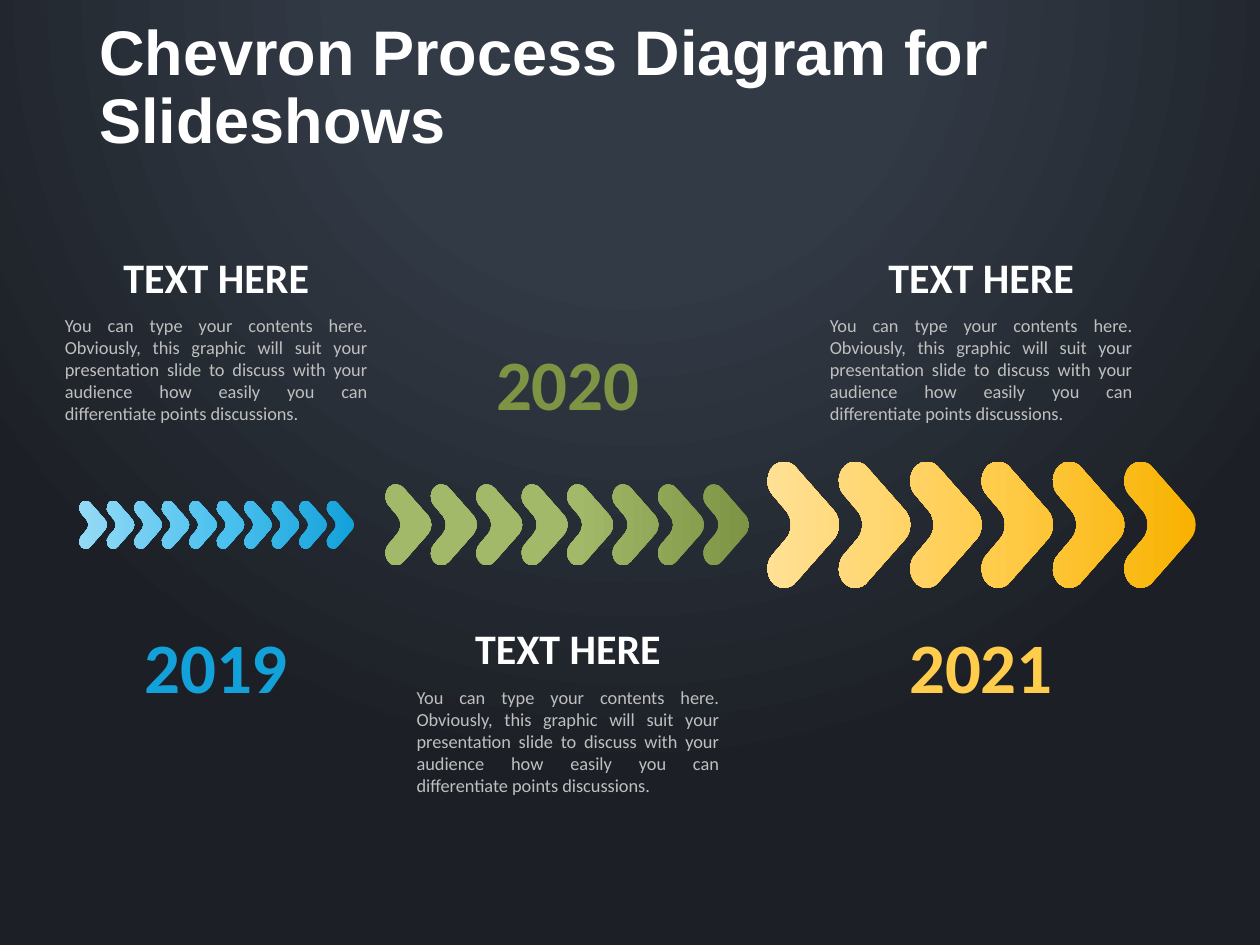
"""Build a dark slide with three growing chevron trails for three years."""

from dataclasses import dataclass

from lxml.etree import SubElement
from pptx import Presentation
from pptx.dml.color import RGBColor
from pptx.enum.text import MSO_ANCHOR, MSO_AUTO_SIZE, PP_ALIGN
from pptx.oxml import parse_xml
from pptx.oxml.ns import nsdecls, qn
from pptx.shapes.autoshape import Shape
from pptx.slide import Slide
from pptx.util import Cm, Pt

Point = tuple[float, float]
Stops = tuple[tuple[int, str], ...]

MIDDLE = 10.58
UPPER, LOWER = 4.93, 12.42
BLOCK_WIDTH, HEADING_HEIGHT, BODY_HEIGHT = 6.1, 1.28, 2.49
YEAR_WIDTH, YEAR_HEIGHT = 3.43, 1.98
CHEVRON_WIDTH = 0.57

CHEVRON: list[tuple[str, tuple[Point, ...]]] = [
    ("moveTo", ((0.13, 0),)),
    ("cubicBezTo", ((0.17, 0), (0.21, 0.02), (0.23, 0.05))),
    ("lnTo", ((0.53, 0.39),)),
    ("cubicBezTo", ((0.58, 0.45), (0.58, 0.55), (0.53, 0.61))),
    ("lnTo", ((0.23, 0.95),)),
    ("cubicBezTo", ((0.21, 0.98), (0.17, 1), (0.13, 1))),
    ("cubicBezTo", ((0.01, 1), (-0.04, 0.83), (0.04, 0.74))),
    ("lnTo", ((0.15, 0.61),)),
    ("cubicBezTo", ((0.2, 0.55), (0.2, 0.45), (0.15, 0.39))),
    ("lnTo", ((0.04, 0.26),)),
    ("cubicBezTo", ((-0.04, 0.17), (0.01, 0), (0.13, 0))),
    ("close", ()),
]

HEADING = "TEXT HERE"
BODY = (
    "You can type your contents here. Obviously, this graphic will suit your "
    "presentation slide to discuss with your audience how easily you can "
    "differentiate points discussions."
)

BACKGROUND: Stops = ((0, "323A45"), (35, "323A45"), (100, "1C2026"))
TITLE_FORMAT = {"name": "Arial", "size": Pt(36), "bold": True}
HEADING_FORMAT = {"name": "Calibri", "size": Pt(24), "bold": True}
BODY_FORMAT = {"name": "Calibri", "size": Pt(10.5), "bold": False}
YEAR_FORMAT = {"name": "Calibri", "size": Pt(40.5), "bold": True}


@dataclass(frozen=True)
class Trail:
    """A row of equal chevrons within a given width."""

    left: float
    width: float
    height: float
    count: int
    stops: Stops


@dataclass(frozen=True)
class Milestone:
    """A year with its text block on the other side of the trail."""

    year: str
    color: str
    left: float
    text_top: float
    year_top: float


TRAILS = [
    Trail(7.77, 7.34, 1.63, 8, ((0, "7E9445"), (48, "A2B969"), (100, "A2B969"))),
    Trail(1.6, 5.54, 0.97, 10, ((0, "13A1D9"), (48, "4CC1EF"), (100, "94DAF5"))),
    Trail(15.47, 8.64, 2.54, 6, ((0, "F8B200"), (48, "FFCC4C"), (100, "FFE094"))),
]
MILESTONES = [
    Milestone("2019", "13A1D9", 1.31, UPPER, LOWER),
    Milestone("2020", "7E9445", 8.4, LOWER, 6.73),
    Milestone("2021", "FFCC4C", 16.73, UPPER, LOWER),
]


def rgb(color: str) -> RGBColor:
    """Turn a hex string into a colour."""
    return RGBColor.from_string(color)


def set_gradient(parent, stops: Stops, radial: bool = False) -> None:
    """Replace the solid fill inside an element with a gradient."""
    gradient = parse_xml(f'<a:gradFill {nsdecls("a")} rotWithShape="1"/>')
    stop_list = SubElement(gradient, qn("a:gsLst"))
    for position, color in stops:
        stop = SubElement(stop_list, qn("a:gs"), pos=str(position * 1000))
        SubElement(stop, qn("a:srgbClr"), val=color)
    if radial:
        circle = SubElement(gradient, qn("a:path"), path="circle")
        SubElement(circle, qn("a:fillToRect"),
                   l="50000", t="-80000", r="50000", b="180000")
    else:
        SubElement(gradient, qn("a:lin"), ang="10800000", scaled="0")
    parent.replace(parent.find(qn("a:solidFill")), gradient)


def draw_chevron(outline, offset: float, height: float) -> None:
    """Append one curved chevron to the outline of a trail."""
    for command, points in CHEVRON:
        step = SubElement(outline, qn(f"a:{command}"))
        for x, y in points:
            SubElement(step, qn("a:pt"), x=str(Cm(offset + x * height)),
                       y=str(Cm(y * height)))


def add_trail(slide: Slide, trail: Trail) -> None:
    """Draw a trail of chevrons as one shape with one gradient."""
    left, top = Cm(trail.left), Cm(MIDDLE - trail.height / 2)
    right, bottom = left + Cm(trail.width), top + Cm(trail.height)
    builder = slide.shapes.build_freeform(left, top)
    builder.add_line_segments([(right, top), (right, bottom), (left, bottom)])
    shape = builder.convert_to_shape()
    outline = shape.element.spPr.find(f".//{qn('a:path')}")
    for child in list(outline):
        outline.remove(child)
    pitch = (trail.width - CHEVRON_WIDTH * trail.height) / (trail.count - 1)
    for index in range(trail.count):
        draw_chevron(outline, index * pitch, trail.height)
    shape.shadow.inherit = False
    shape.line.fill.background()
    shape.fill.solid()
    set_gradient(shape.element.spPr, trail.stops)


def write_text(box: Shape, text: str, color: str, alignment: PP_ALIGN,
               font_format: dict) -> None:
    """Put one formatted paragraph in a box."""
    para = box.text_frame.paragraphs[0]
    para.alignment = alignment
    span = para.add_run()
    span.text = text
    span.font.color.rgb = rgb(color)
    for name, value in font_format.items():
        setattr(span.font, name, value)


def add_box(slide: Slide, bounds: tuple[float, ...], frame_format: dict) -> Shape:
    """Add a text box that grows with its text."""
    box = slide.shapes.add_textbox(*map(Cm, bounds))
    settings = {"auto_size": MSO_AUTO_SIZE.SHAPE_TO_FIT_TEXT, **frame_format}
    for name, value in settings.items():
        setattr(box.text_frame, name, value)
    return box


def add_milestone(slide: Slide, item: Milestone) -> None:
    """Draw the heading, body and year of a milestone."""
    flush = {"word_wrap": True, "margin_left": 0, "margin_right": 0}
    heading = add_box(slide, (item.left, item.text_top, BLOCK_WIDTH, HEADING_HEIGHT),
                      {**flush, "vertical_anchor": MSO_ANCHOR.BOTTOM})
    write_text(heading, HEADING, "FFFFFF", PP_ALIGN.CENTER, HEADING_FORMAT)
    body_top = item.text_top + HEADING_HEIGHT
    body = add_box(slide, (item.left, body_top, BLOCK_WIDTH, BODY_HEIGHT), flush)
    write_text(body, BODY, "BFBFBF", PP_ALIGN.JUSTIFY, BODY_FORMAT)
    year_left = item.left + (BLOCK_WIDTH - YEAR_WIDTH) / 2
    year = add_box(slide, (year_left, item.year_top, YEAR_WIDTH, YEAR_HEIGHT),
                   {"word_wrap": False})
    write_text(year, item.year, item.color, PP_ALIGN.CENTER, YEAR_FORMAT)


def add_title(slide: Slide) -> None:
    """Place and format the title."""
    title = slide.shapes.title
    bounds = {"left": 1.75, "top": 0.3, "width": 21.89, "height": 2.06}
    for name, value in bounds.items():
        setattr(title, name, Cm(value))
    frame_format = {"vertical_anchor": MSO_ANCHOR.TOP, "margin_right": 0,
                    "word_wrap": True, "auto_size": MSO_AUTO_SIZE.NONE}
    for name, value in frame_format.items():
        setattr(title.text_frame, name, value)
    write_text(title, "Chevron Process Diagram for Slideshows", "FFFFFF",
               PP_ALIGN.LEFT, TITLE_FORMAT)
    title.text_frame.paragraphs[0].line_spacing = 0.9


def main() -> None:
    """Build and save the deck."""
    deck = Presentation()
    deck.slide_width, deck.slide_height = Cm(25.4), Cm(19.05)
    page = deck.slides.add_slide(deck.slide_layouts.get_by_name("Title Only"))
    page.background.fill.solid()
    set_gradient(page.element.find(f".//{qn('p:bgPr')}"), BACKGROUND, radial=True)
    add_title(page)
    for trail in TRAILS:
        add_trail(page, trail)
    for item in MILESTONES:
        add_milestone(page, item)
    deck.save("out.pptx")


if __name__ == "__main__":
    main()
